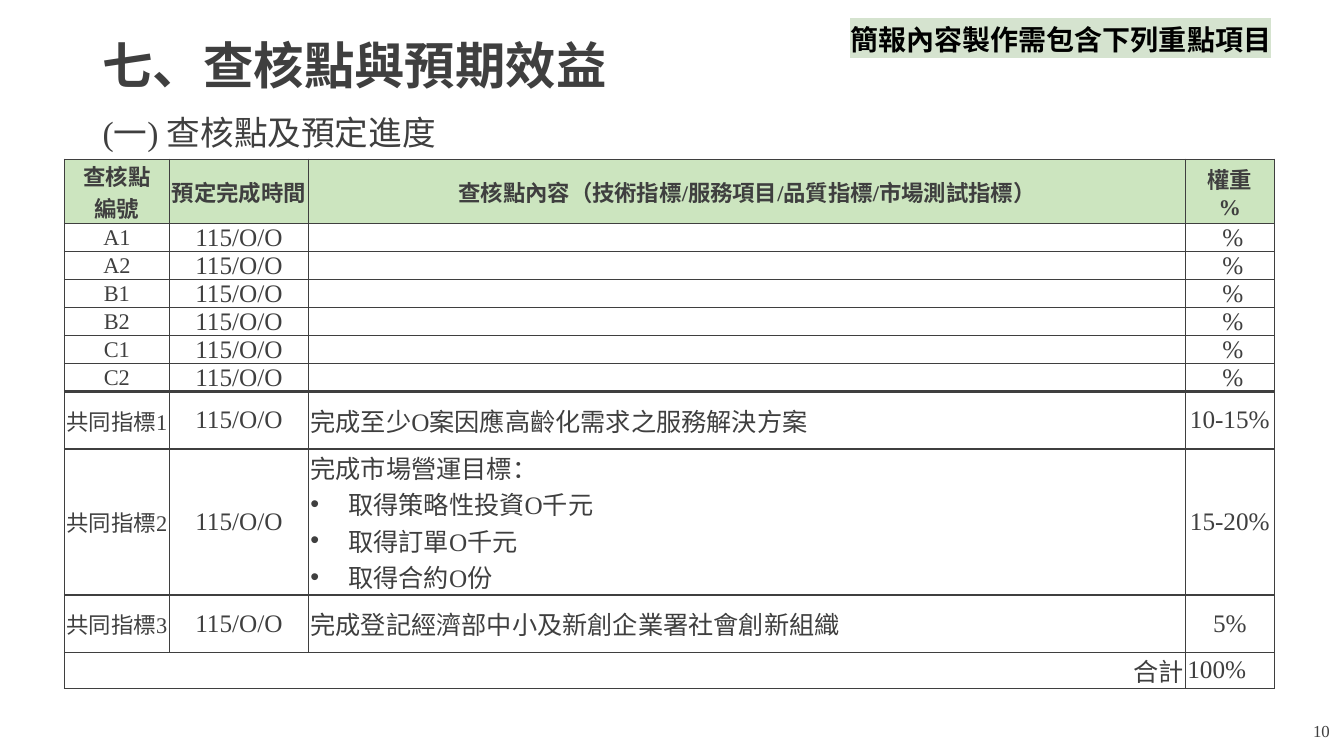
from dataclasses import dataclass

from lxml.etree import SubElement
from pptx import Presentation
from pptx.dml.color import RGBColor
from pptx.enum.text import MSO_ANCHOR as Anchor, PP_ALIGN as Align
from pptx.oxml.ns import qn
from pptx.util import Pt

COLORS = {
    "ink": "3F3F3F",
    "black": "000000",
    "header": "CCE5BF",
    "white": "FFFFFF",
    "highlight": "D5E3CF",
}
FONT = "Times New Roman"
BULLET = "•"
COLUMN_WIDTHS = (75, 99.4, 626.4, 63.4)
THIN, THICK = 1, 2.25
DATE = "115/O/O"


@dataclass
class Label:
    text: str
    left: float
    top: float
    width: float
    height: float
    size: float
    align: Align
    anchor: Anchor = Anchor.TOP
    color: str = "ink"
    bold: bool = False
    line_spacing: float | None = None
    space_after: float = 0
    highlight: str | None = None


@dataclass
class Row:
    cells: tuple[str, str, str, str]
    height: float
    aligns: tuple = (Align.CENTER, Align.CENTER, Align.JUSTIFY, Align.CENTER)
    sizes: tuple = (16, 18, 18, 18)
    fill: str = "white"
    bold: bool = False
    top_line: float = THIN
    bottom_line: float = THIN


LABELS = [
    Label("10", 927.4, 509.8, 33, 23.8, 12, Align.CENTER, Anchor.MIDDLE),
    Label("七、查核點與預期效益", 66.2, 23.8, 828, 49.7, 36, Align.JUSTIFY,
          Anchor.MIDDLE, bold=True, line_spacing=0.9),
    Label("(一) 查核點及預定進度", 66.2, 76.3, 828, 37.4, 24, Align.JUSTIFY,
          space_after=6),
    Label("簡報內容製作需包含下列重點項目", 563.8, 12.2, 388, 31.7, 20, Align.CENTER,
          color="black", bold=True, highlight="highlight"),
]

CHECKPOINTS = ("A1", "A2", "B1", "B2", "C1", "C2")
MARKET_GOALS = "\n".join((
    "完成市場營運目標：",
    BULLET + "取得策略性投資O千元",
    BULLET + "取得訂單O千元",
    BULLET + "取得合約O份",
))
ROWS = [
    Row(("查核點\n編號", "預定完成時間",
         "查核點內容（技術指標/服務項目/品質指標/市場測試指標）", "權重\n%"),
        45.7, aligns=(Align.CENTER,) * 4, sizes=(16,) * 4, fill="header", bold=True),
    *(Row((code, DATE, "", " %"), 20,
          bottom_line=THICK if code == CHECKPOINTS[-1] else THIN)
      for code in CHECKPOINTS),
    Row(("共同指標1", DATE, "完成至少O案因應高齡化需求之服務解決方案", "10-15%"),
        40.4, top_line=THICK),
    Row(("共同指標2", DATE, MARKET_GOALS, "15-20%"), 104.3),
    Row(("共同指標3", DATE, "完成登記經濟部中小及新創企業署社會創新組織", "5%"), 40.4),
    Row(("合計", "", "", "100%"), 26,
        aligns=(Align.RIGHT, Align.LEFT, Align.LEFT, Align.LEFT), sizes=(18,) * 4),
]


def rgb(name: str) -> RGBColor:
    return RGBColor.from_string(COLORS[name])


def style_font(paragraph, size: float, color: str, bold: bool) -> None:
    font = paragraph.font
    font.name, font.size, font.bold = FONT, Pt(size), bold
    font.color.rgb = rgb(color)


def add_label(slide, label: Label) -> None:
    box = slide.shapes.add_textbox(
        Pt(label.left), Pt(label.top), Pt(label.width), Pt(label.height))
    frame = box.text_frame
    frame.word_wrap = True
    frame.vertical_anchor = label.anchor
    paragraph = frame.paragraphs[0]
    paragraph.alignment = label.align
    paragraph.line_spacing = label.line_spacing
    paragraph.space_after = Pt(label.space_after)
    run = paragraph.add_run()
    run.text = label.text
    style_font(paragraph, label.size, label.color, label.bold)
    if label.highlight:
        marker = SubElement(run._r.get_or_add_rPr(), qn("a:highlight"))
        SubElement(marker, qn("a:srgbClr"), val=COLORS[label.highlight])


def add_bullet(paragraph) -> None:
    properties = paragraph._p.get_or_add_pPr()
    properties.set("marL", str(Pt(27)))
    properties.set("indent", str(Pt(-27)))
    SubElement(properties, qn("a:buFont"), typeface="Arial")
    SubElement(properties, qn("a:buChar"), char=BULLET)


def add_borders(cell, top: float, bottom: float) -> None:
    properties = cell._tc.get_or_add_tcPr()
    for side, width in (("L", THIN), ("R", THIN), ("T", top), ("B", bottom)):
        line = SubElement(properties, qn(f"a:ln{side}"), w=str(Pt(width)))
        fill = SubElement(line, qn("a:solidFill"))
        SubElement(fill, qn("a:srgbClr"), val=COLORS["ink"])


def fill_cell(cell, row: Row, column: int) -> None:
    cell.margin_left = cell.margin_right = Pt(1.4)
    cell.margin_top = cell.margin_bottom = 0
    cell.vertical_anchor = Anchor.MIDDLE
    add_borders(cell, row.top_line, row.bottom_line)
    cell.fill.solid()
    cell.fill.fore_color.rgb = rgb(row.fill)
    content = row.cells[column]
    if not content:
        SubElement(cell.text_frame.paragraphs[0]._p, qn("a:endParaRPr"), sz="1200")
        return
    cell.text = content.replace(BULLET, "")
    for paragraph, line in zip(cell.text_frame.paragraphs, content.split("\n")):
        paragraph.alignment = row.aligns[column]
        if line.startswith(BULLET):
            add_bullet(paragraph)
        style_font(paragraph, row.sizes[column], "ink", row.bold)


def add_schedule(slide) -> None:
    schedule = slide.shapes.add_table(
        len(ROWS), len(COLUMN_WIDTHS), Pt(46), Pt(113.8),
        Pt(sum(COLUMN_WIDTHS)), Pt(sum(row.height for row in ROWS))).table
    schedule.first_row = schedule.horz_banding = False
    for column, width in zip(schedule.columns, COLUMN_WIDTHS):
        column.width = Pt(width)
    for index, row in enumerate(ROWS):
        schedule.rows[index].height = Pt(row.height)
        for column in range(len(COLUMN_WIDTHS)):
            fill_cell(schedule.cell(index, column), row, column)
    total = len(ROWS) - 1
    schedule.cell(total, 0).merge(schedule.cell(total, 2))


def main() -> None:
    deck = Presentation()
    deck.slide_width, deck.slide_height = Pt(960), Pt(540)
    slide = deck.slides.add_slide(deck.slide_layouts[6])
    add_schedule(slide)
    for label in LABELS:
        add_label(slide, label)
    deck.save("out.pptx")


if __name__ == "__main__":
    main()
